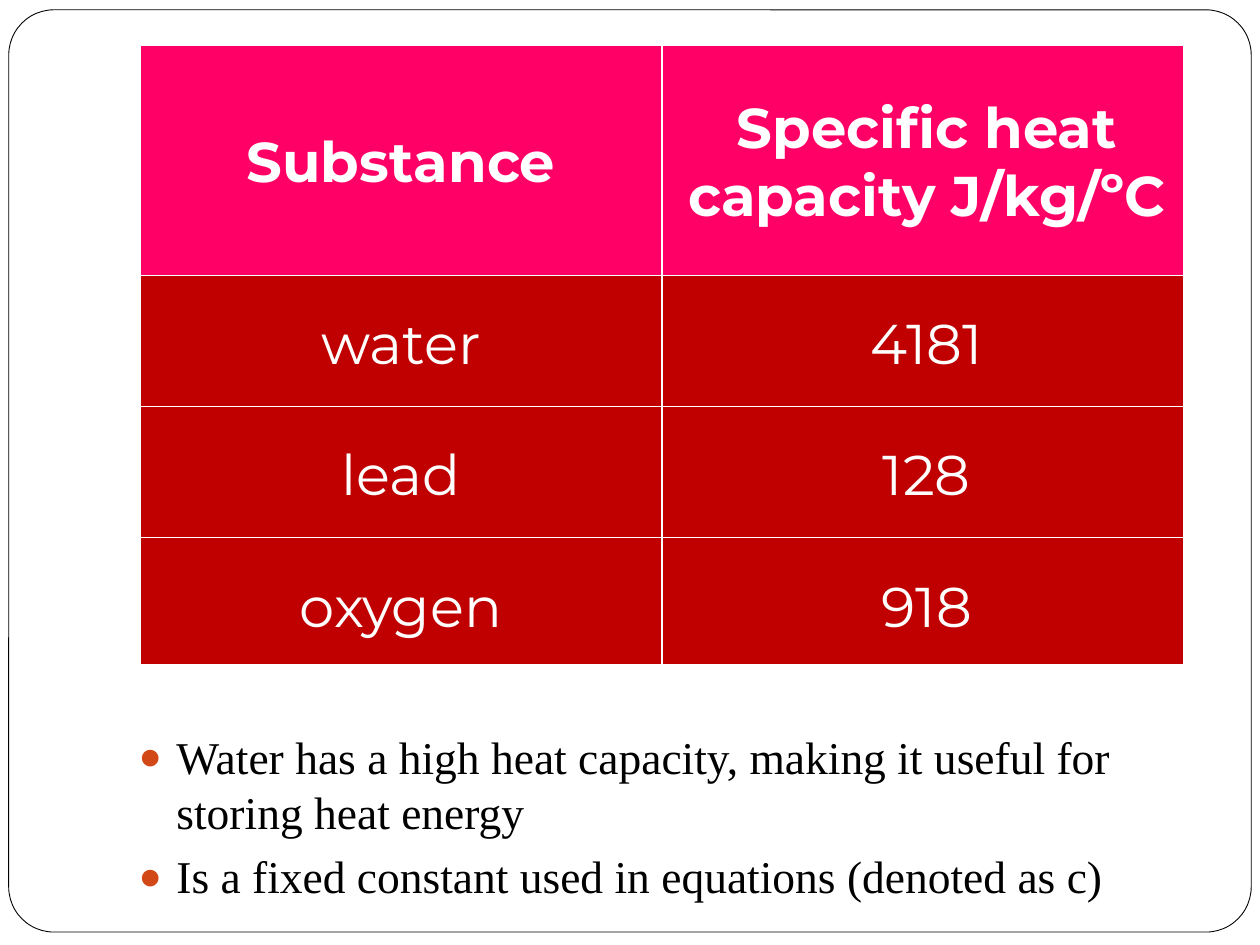
from lxml.etree import SubElement
from pptx import Presentation
from pptx.dml.color import RGBColor
from pptx.enum.shapes import MSO_SHAPE
from pptx.enum.text import MSO_ANCHOR, MSO_AUTO_SIZE, PP_ALIGN
from pptx.oxml import parse_xml
from pptx.oxml.ns import nsdecls, qn
from pptx.util import Pt

COLORS = {
    "white": "FFFFFF",
    "black": "000000",
    "header": "FF0066",
    "row": "C00000",
    "bullet": "D34817",
}
ROWS = [
    ("Substance", "Specific heat capacity J/kg/ºC"),
    ("water", "4181"),
    ("lead", "128"),
    ("oxygen", "918"),
]
NOTES = [
    "Water has a high heat capacity, making it useful for storing heat energy",
    "Is a fixed constant used in equations (denoted as c)",
]
OUTER_BORDER, INNER_BORDER = 6, 1


def color(name):
    return RGBColor.from_string(COLORS[name])


def add_run(paragraph, text, font_name, size, color_name, bold=False):
    run = paragraph.add_run()
    run.text = text
    run.font.name = font_name
    run.font.size = Pt(size)
    run.font.bold = bold
    run.font.color.rgb = color(color_name)


def add_frame(slide):
    frame = slide.shapes.add_shape(
        MSO_SHAPE.ROUNDED_RECTANGLE, Pt(5), Pt(5.6), Pt(710), Pt(527))
    frame.adjustments[0] = 0.049
    frame.shadow.inherit = False
    frame.fill.solid()
    frame.fill.fore_color.rgb = color("white")
    frame.line.color.rgb = color("black")
    frame.line.width = Pt(0.5)
    # Send the frame behind the placeholder
    slide.shapes.element.insert(2, frame.element)


def set_borders(cell, widths):
    properties = cell._tc.get_or_add_tcPr()
    for index, (side, width) in enumerate(widths.items()):
        properties.insert(index, parse_xml(
            f'<a:ln{side} {nsdecls("a")} w="{Pt(width)}"><a:solidFill>'
            f'<a:srgbClr val="{COLORS["white"]}"/></a:solidFill></a:ln{side}>'))


def format_cell(cell, text, is_header):
    cell.fill.solid()
    cell.fill.fore_color.rgb = color("header" if is_header else "row")
    cell.vertical_anchor = MSO_ANCHOR.MIDDLE
    cell.margin_left = cell.margin_top = Pt(5.8)
    cell.margin_right, cell.margin_bottom = Pt(3.6), Pt(1.4)
    paragraph = cell.text_frame.paragraphs[0]
    paragraph.alignment = PP_ALIGN.CENTER
    add_run(paragraph, text, "Montserrat", 32, "white", bold=is_header)


def add_heat_table(slide):
    last_row, last_column = len(ROWS) - 1, len(ROWS[0]) - 1
    table = slide.shapes.add_table(
        len(ROWS), len(ROWS[0]), Pt(77.8), Pt(23.8), Pt(601), Pt(358)).table
    table.horz_banding = False
    for row_index, values in enumerate(ROWS):
        table.rows[row_index].height = Pt(74.9 if row_index else 133.6)
        for column_index, text in enumerate(values):
            cell = table.cell(row_index, column_index)
            format_cell(cell, text, is_header=row_index == 0)
            on_edge = {
                "L": column_index == 0,
                "R": column_index == last_column,
                "T": row_index == 0,
                "B": row_index == last_row,
            }
            set_borders(cell, {side: OUTER_BORDER if edge else INNER_BORDER
                               for side, edge in on_edge.items()})


def set_bullet(paragraph):
    properties = paragraph._p.get_or_add_pPr()
    properties.set("marL", str(Pt(21.6)))
    properties.set("indent", str(-Pt(21.6)))
    bullet_color = SubElement(properties, qn("a:buClr"))
    SubElement(bullet_color, qn("a:srgbClr"), val=COLORS["bullet"])
    SubElement(properties, qn("a:buSzPct"), val="85000")
    SubElement(properties, qn("a:buChar"), char="●")


def fill_notes(body):
    body.left, body.top, body.width, body.height = Pt(72), Pt(413), Pt(612), Pt(127)
    text_frame = body.text_frame
    text_frame.word_wrap = True
    text_frame.auto_size = MSO_AUTO_SIZE.NONE
    text_frame.vertical_anchor = MSO_ANCHOR.TOP
    for index, text in enumerate(NOTES):
        paragraph = text_frame.add_paragraph() if index else text_frame.paragraphs[0]
        set_bullet(paragraph)
        paragraph.space_before = Pt(5.8 if index else 0)
        add_run(paragraph, text, "Times New Roman", 26, "black")


def main():
    presentation = Presentation()
    presentation.slide_width, presentation.slide_height = Pt(720), Pt(540)
    slide = presentation.slides.add_slide(presentation.slide_layouts[1])

    # The slide has no title
    title = slide.shapes.title.element
    title.getparent().remove(title)

    add_frame(slide)
    fill_notes(slide.placeholders[1])
    add_heat_table(slide)
    presentation.save("out.pptx")


if __name__ == "__main__":
    main()
